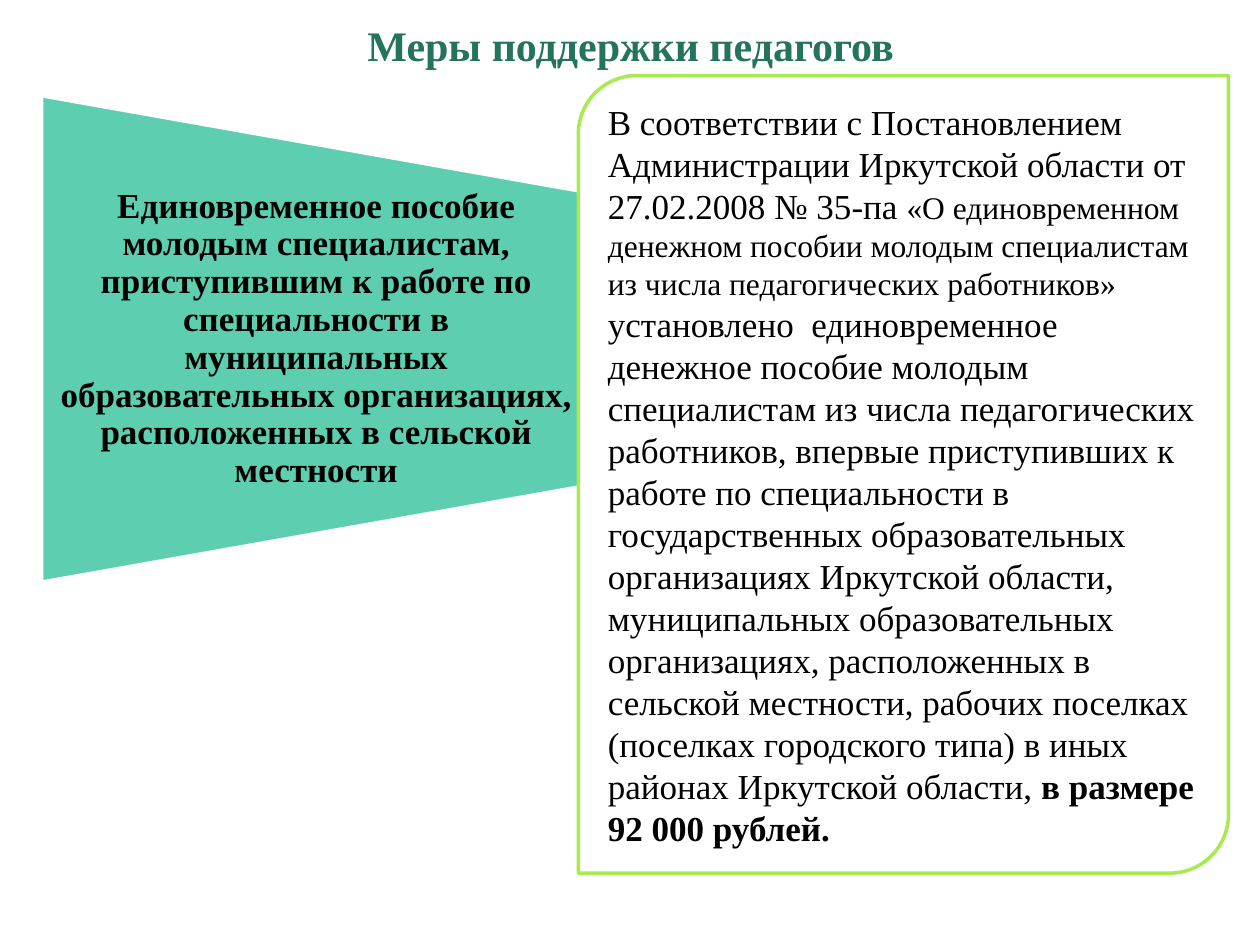
from pptx import Presentation, util as u
from pptx.dml.color import RGBColor
from pptx.enum import shapes, text

WHITE = RGBColor(0xFF, 0xFF, 0xFF)
BLACK = RGBColor(0, 0, 0)
PINE = RGBColor(0x23, 0x73, 0x5D)
MINT = RGBColor(0x5D, 0xCE, 0xAF)
LIME = RGBColor(0xA7, 0xEA, 0x52)
FONT = "Times New Roman"
WIDTH, HEIGHT = u.Inches(10), u.Inches(7.5)

TITLE = "Меры поддержки педагогов"
BENEFIT = ("Единовременное пособие молодым специалистам, приступившим к работе "
           "по специальности в муниципальных образовательных организациях, "
           "расположенных в сельской местности")
DECREE = [
    ("В соответствии с Постановлением Администрации Иркутской области "
     "от 27.02.2008 № 35-па ", 20, False),
    ("«О единовременном денежном пособии молодым специалистам из числа "
     "педагогических работников» ", 18, False),
    ("установлено  единовременное денежное пособие молодым специалистам из числа "
     "педагогических работников, впервые приступивших к работе по специальности в "
     "государственных образовательных организациях Иркутской области, "
     "муниципальных образовательных организациях, расположенных в сельской "
     "местности, рабочих поселках (поселках городского типа) в иных районах "
     "Иркутской области, ", 20, False),
    ("в размере 92 000 рублей.", 20, True),
]


def share(left, top, width, height):
    """Turn percentages of the slide's size into a box."""
    return [int(v * full / 100) for v, full in
            zip((left, top, width, height), (WIDTH, HEIGHT) * 2)]


def write(s, runs, color=BLACK, align=text.PP_ALIGN.CENTER):
    """Fill a shape's only paragraph with (words, size, bold) runs."""
    tf = s.text_frame
    tf.word_wrap = True
    tf.vertical_anchor = text.MSO_ANCHOR.MIDDLE
    p = tf.paragraphs[0]
    p.alignment = align
    for words, size, bold in runs:
        r = p.add_run()
        r.text = words
        r.font.name, r.font.size, r.font.bold = FONT, u.Pt(size), bold
        r.font.color.rgb = color
    return tf


def add_panel(sp, kind, box, fill, line):
    """Add a flat preset shape with a 2 pt outline."""
    s = sp.add_shape(kind, *box)
    s.shadow.inherit = False
    s.fill.solid()
    s.fill.fore_color.rgb = fill
    s.line.color.rgb = line
    s.line.width = u.Pt(2)
    return s


def add_title(sp, box):
    """Place the centred heading."""
    write(sp.add_textbox(*box), [(TITLE, 24, True)], PINE)


def add_benefit(sp, box):
    """Place the sideways trapezoid and its caption in the box."""
    x, y, w, h = box
    turned = (x + (w - h) // 2, y + (h - w) // 2, h, w)
    s = add_panel(sp, shapes.MSO_SHAPE.FLOWCHART_MANUAL_OPERATION, turned, MINT, WHITE)
    s.rotation = 270
    caption = sp.add_textbox(x, y + h // 5, w, h * 3 // 5)
    tf = write(caption, [(BENEFIT, 20, True)])
    tf.margin_left = tf.margin_right = u.Inches(0.14)
    tf.margin_top = tf.margin_bottom = 0
    tf.paragraphs[0].line_spacing = 0.9


def add_decree(sp, box):
    """Place the outlined panel with the decree's text."""
    s = add_panel(sp, shapes.MSO_SHAPE.ROUND_2_DIAG_RECTANGLE, box, WHITE, LIME)
    s.adjustments[0], s.adjustments[1] = 0.09, 0
    write(s, DECREE, align=text.PP_ALIGN.LEFT)


def main():
    """Build and save the slide."""
    prs = Presentation()
    prs.slide_width, prs.slide_height = WIDTH, HEIGHT
    sp = prs.slides.add_slide(prs.slide_layouts[6]).shapes
    add_title(sp, share(1.6, 0, 96.9, 9.5))
    add_benefit(sp, share(3.3, 10.13, 43.6, 51.47))
    add_decree(sp, share(45.9, 8, 51.6, 84.4))
    prs.save("out.pptx")


if __name__ == "__main__":
    main()
